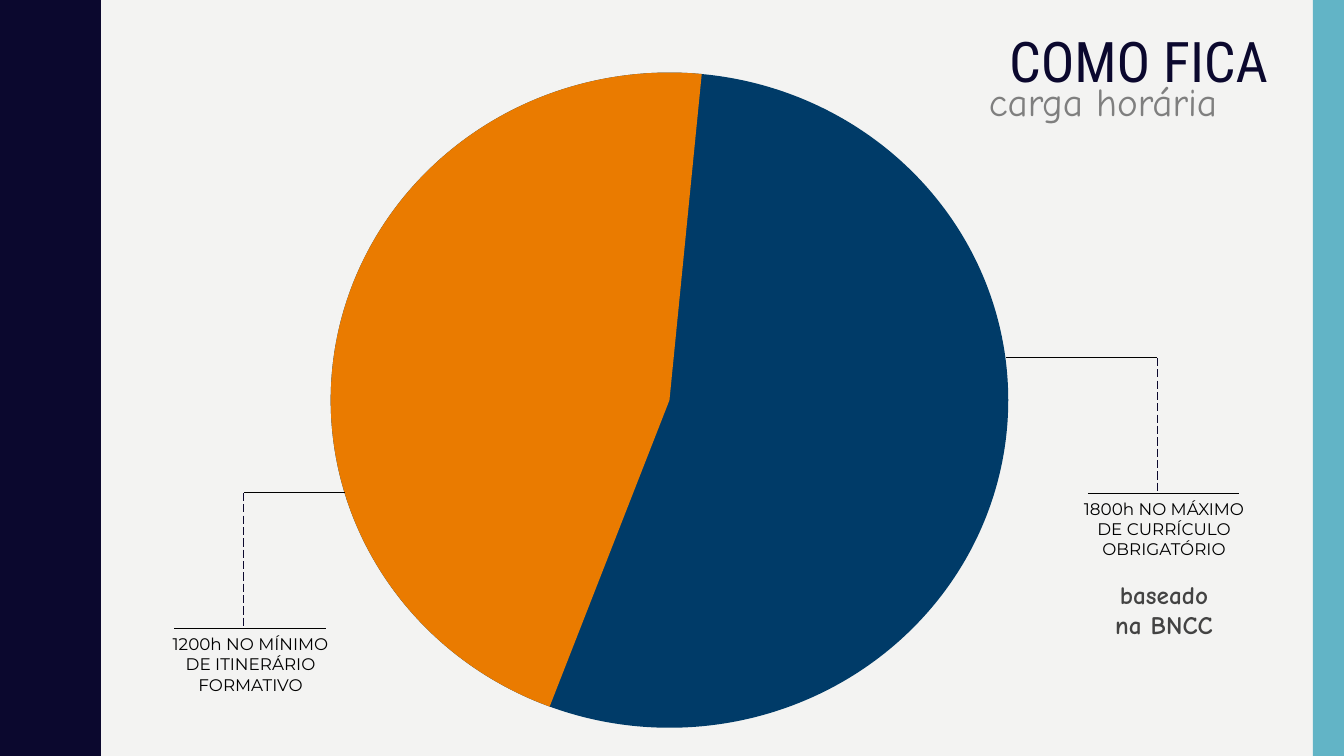
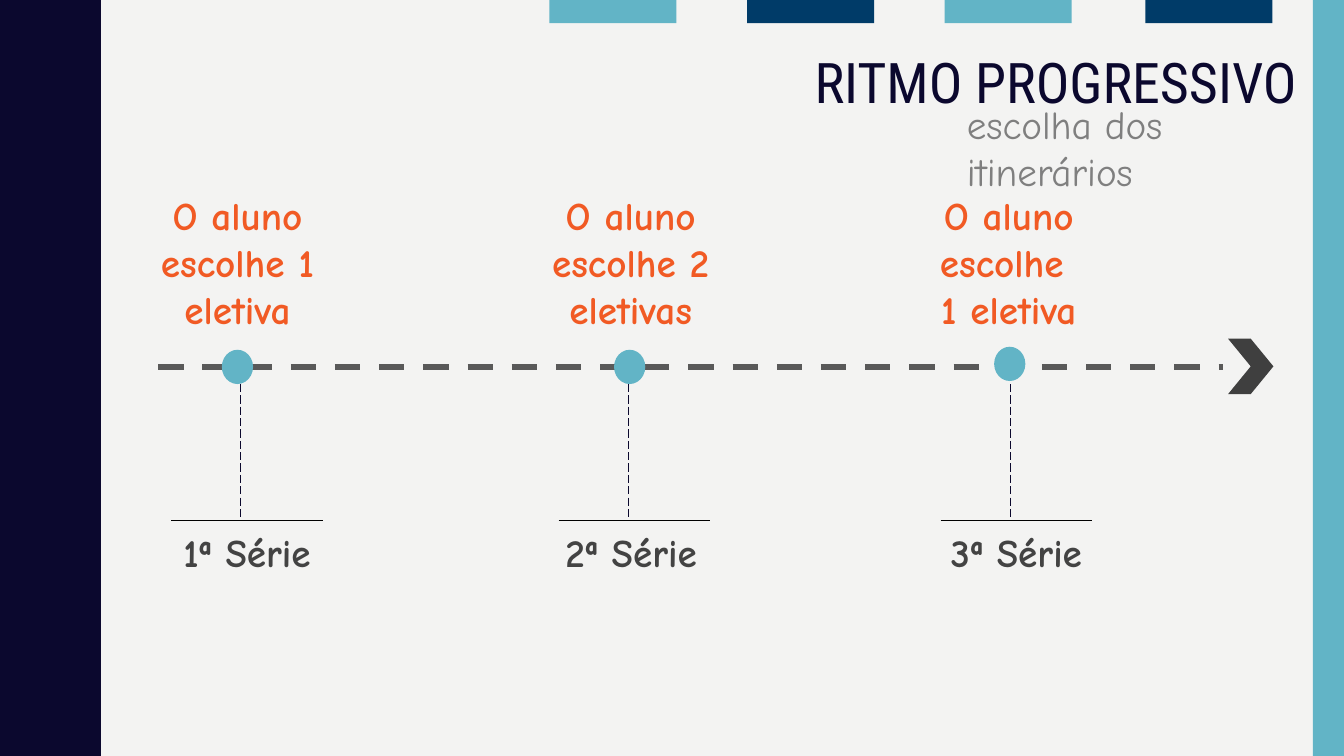
from lxml.etree import SubElement
from pptx import Presentation
from pptx.dml.color import RGBColor
from pptx.enum.dml import MSO_LINE
from pptx.enum.shapes import MSO_CONNECTOR, MSO_SHAPE
from pptx.enum.text import MSO_ANCHOR, PP_ALIGN
from pptx.oxml.ns import qn
from pptx.util import Inches, Pt

PAPER = RGBColor(0xF3, 0xF3, 0xF2)
NAVY = RGBColor(0x0B, 0x08, 0x2E)
TEAL = RGBColor(0x62, 0xB4, 0xC6)
BLUE = RGBColor(0x00, 0x3B, 0x68)
ORANGE = RGBColor(0xEA, 0x7B, 0x00)
CORAL = RGBColor(0xF1, 0x5A, 0x24)
BLACK = RGBColor(0x00, 0x00, 0x00)
CHARCOAL = RGBColor(0x43, 0x43, 0x43)
ARROW = RGBColor(0x3F, 0x3F, 0x3F)
DASHES = RGBColor(0x59, 0x59, 0x59)
GRAY = RGBColor(0x7F, 0x7F, 0x7F)

HEAD, HAND, BODY = "Roboto Condensed", "Comic Neue", "Montserrat"
W, H = 13.33, 7.5
STEM, BAR, STEM_DX = 1.35, 1.5, 0.69

WAVES = 5
HALF_WAVE = [(0.78, 0), (0.78, 0.07), (0.79, 0.14), (0.8, 0.2), (0.81, 0.25),
             (0.83, 0.29), (0.85, 0.33), (0.87, 0.38), (0.89, 0.42),
             (0.91, 0.46), (0.93, 0.5), (0.95, 0.55), (0.96, 0.61),
             (0.97, 0.68), (0.97, 0.75)]

PIE_BOX = (3.28, 0.72, 6.72, 6.5)
PIE_ANGLES = (66.81, 165.39)
CALLOUTS = [
    {"text": "1800h NO MÁXIMO DE CURRÍCULO OBRIGATÓRIO",
     "bar": 10.79, "top": 3.55, "edge": 9.98},
    {"text": "1200h NO MÍNIMO DE ITINERÁRIO FORMATIVO",
     "bar": 1.73, "top": 4.89, "edge": 3.42},
]

TABS = [(5.45, TEAL), (7.41, BLUE), (9.37, TEAL), (11.36, BLUE)]
AXIS_Y, STEM_TOP = 3.64, 3.81
SERIES = [
    {"label": "1ª Série", "note": "O aluno escolhe 1 eletiva",
     "bar": 1.7, "dot": (2.2, 3.47), "label_x": 1.66, "note_x": 1.47},
    {"label": "2ª Série", "note": "O aluno escolhe 2 eletivas",
     "bar": 5.54, "dot": (6.09, 3.47), "label_x": 5.47, "note_x": 5.37},
    {"label": "3ª Série", "note": "O aluno escolhe \v1 eletiva",
     "bar": 9.33, "dot": (9.86, 3.44), "label_x": 9.29, "note_x": 9.12},
]


def paint(sp, color):
    sp.shadow.inherit = False
    sp.fill.solid()
    sp.fill.fore_color.rgb = color
    sp.line.fill.background()


def shape(s, kind, box, color):
    sp = s.shapes.add_shape(kind, *map(Inches, box))
    paint(sp, color)
    return sp


def line(s, x1, y1, x2, y2, color=BLACK, width=0.75, dash=None):
    c = s.shapes.add_connector(MSO_CONNECTOR.STRAIGHT,
                               *map(Inches, (x1, y1, x2, y2)))
    c.line.color.rgb = color
    c.line.width = Pt(width)
    if dash:
        c.line.dash_style = dash
    SubElement(c._element.spPr, qn("a:effectLst"))


def text(s, box, words, size, font, color, bold=False,
         align=PP_ALIGN.CENTER, inset=0.05):
    tf = s.shapes.add_textbox(*map(Inches, box)).text_frame
    tf.word_wrap = True
    tf.margin_left = tf.margin_right = Inches(0.1)
    tf.margin_top = tf.margin_bottom = Inches(inset)
    p = tf.paragraphs[0]
    p.text = words
    p.alignment = align
    for r in p.runs:
        r.font.size, r.font.name, r.font.bold = Pt(size), font, bold
        r.font.color.rgb = color
    return tf


def wave_band(s):
    period = H / WAVES
    wave = HALF_WAVE + [(x, period - y) for x, y in HALF_WAVE[-2::-1]]
    edge = [(x, y + i * period) for i in range(WAVES) for x, y in wave]
    fb = s.shapes.build_freeform(0, 0, scale=Inches(1))
    fb.add_line_segments(edge + [(0, H)], close=True)
    paint(fb.convert_to_shape(), NAVY)


def new_slide(prs, title, x, bottom):
    s = prs.slides.add_slide(prs.slide_layouts[6])
    wave_band(s)
    shape(s, MSO_SHAPE.RECTANGLE, (W - 0.31, 0, 0.31, H), TEAL)
    tf = text(s, (x, bottom - 0.8, W - x, 0.8), title, 40, HEAD, NAVY,
              align=PP_ALIGN.LEFT)
    tf.vertical_anchor = MSO_ANCHOR.BOTTOM
    tf.paragraphs[0].line_spacing = 0.9
    return s


def stem_and_bar(s, bar, top):
    x, y = bar + STEM_DX, top + STEM
    line(s, x, top, x, y, NAVY, dash=MSO_LINE.LONG_DASH)
    line(s, bar, y, bar + BAR, y)


def workload_slide(prs):
    s = new_slide(prs, "COMO FICA", 9.91, 0.99)
    text(s, (9.66, 0.72, 2.56, 0.57), "carga horária", 28, HAND, GRAY)
    shape(s, MSO_SHAPE.OVAL, PIE_BOX, BLUE)
    pie = shape(s, MSO_SHAPE.PIE, PIE_BOX, ORANGE)
    pie.adjustments[0], pie.adjustments[1] = PIE_ANGLES
    for c in CALLOUTS:
        bar, top = c["bar"], c["top"]
        line(s, c["edge"], top, bar + STEM_DX, top)
        stem_and_bar(s, bar, top)
        text(s, (bar - 0.19, top + STEM, 1.89, 0.91), c["text"], 12, BODY, BLACK)
    text(s, (10.89, 5.7, 1.31, 0.71), "baseado na BNCC", 18, HAND, CHARCOAL,
         bold=True)


def rhythm_slide(prs):
    s = new_slide(prs, "RITMO PROGRESSIVO", 7.98, 1.2)
    text(s, (9.49, 0.95, 3.21, 0.57), "escolha dos itinerários", 28, HAND, GRAY,
         align=PP_ALIGN.LEFT)
    for x, color in TABS:
        shape(s, MSO_SHAPE.RECTANGLE, (x, 0, 1.26, 0.23), color)
    line(s, 1.57, AXIS_Y, 12.13, AXIS_Y, DASHES, 4.5, MSO_LINE.DASH)
    shape(s, MSO_SHAPE.CHEVRON, (12.18, 3.36, 0.45, 0.55), ARROW)
    for c in SERIES:
        shape(s, MSO_SHAPE.OVAL, (*c["dot"], 0.31, 0.34), TEAL)
        stem_and_bar(s, c["bar"], STEM_TOP)
        text(s, (c["label_x"], 5.14, 1.58, 1.14), c["label"], 28, HAND,
             CHARCOAL, bold=True, inset=0.1)
        text(s, (c["note_x"], 1.8, 1.77, 1.62), c["note"], 28, HAND,
             CORAL, bold=True, inset=0.1)


def main():
    prs = Presentation()
    prs.slide_width, prs.slide_height = Inches(W), Inches(H)
    fill = prs.slide_master.background.fill
    fill.solid()
    fill.fore_color.rgb = PAPER
    workload_slide(prs)
    rhythm_slide(prs)
    prs.save("out.pptx")


if __name__ == "__main__":
    main()
